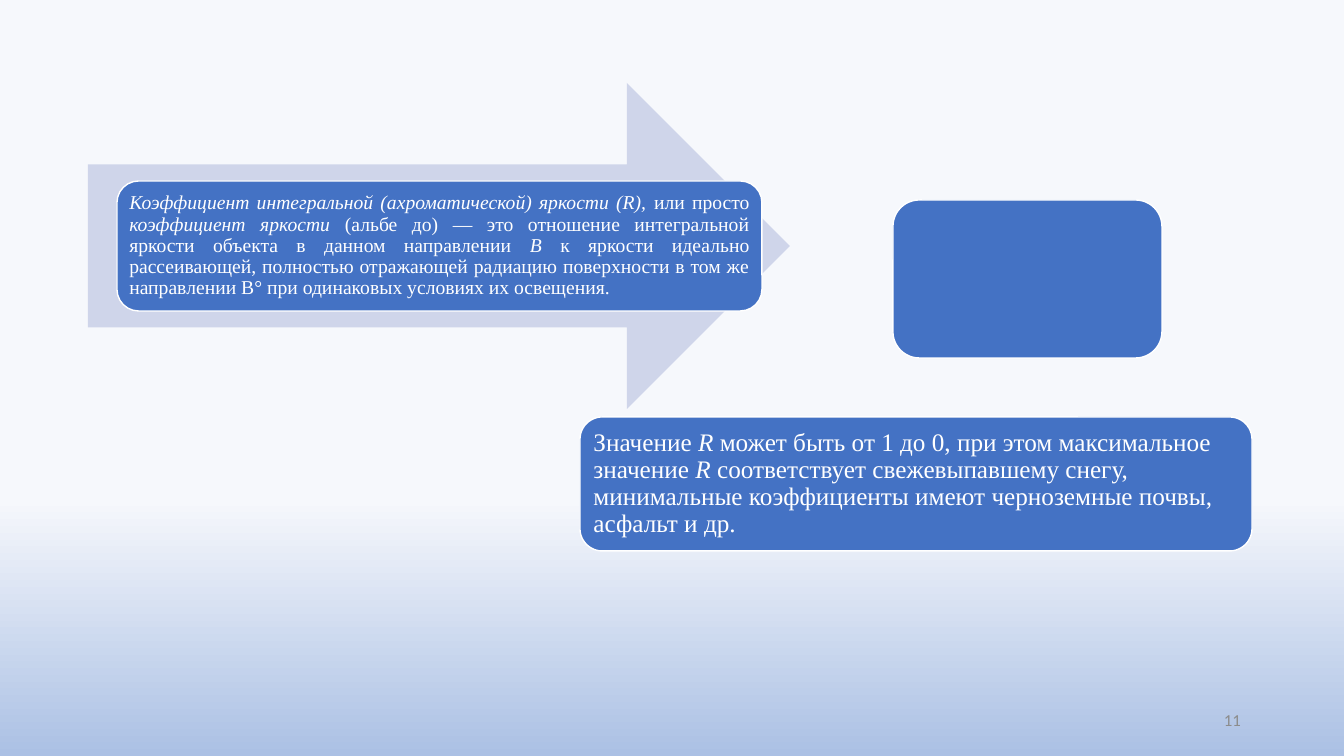
import pptx
import pptx.util
import pptx.dml.color
import pptx.enum.shapes
import pptx.enum.text

PX = 9071
WHITE = pptx.dml.color.RGBColor(0xFF, 0xFF, 0xFF)
BLUE = pptx.dml.color.RGBColor(0x44, 0x72, 0xC4)
ARROW_BLUE = pptx.dml.color.RGBColor(0xCF, 0xD5, 0xEA)
SKY_TOP = pptx.dml.color.RGBColor(0xF6, 0xF8, 0xFC)
SKY_BOTTOM = pptx.dml.color.RGBColor(0xAB, 0xC0, 0xE4)
NUMBER_GRAY = pptx.dml.color.RGBColor(0x8C, 0x8C, 0x8C)
SHAPES = pptx.enum.shapes.MSO_SHAPE
ALIGN = pptx.enum.text.PP_ALIGN

DEFINITION = [
    ("Коэффициент интегральной (ахроматической) яркости (R), ", True),
    ("или просто ", False),
    ("коэффициент яркости ", True),
    ("(альбе до) — это отношение интегральной яркости объекта в данном направлении ", False),
    ("В ", True),
    ("к яркости идеально рассеивающей, полностью отражающей радиацию поверхности "
     "в том же направлении В° при одинаковых условиях их освещения.", False),
]
VALUE_RANGE = [
    ("Значение ", False),
    ("R ", True),
    ("может быть от 1 до 0, при этом максимальное значение ", False),
    ("R ", True),
    ("соответствует свежевыпавшему снегу, минимальные коэффициенты имеют "
     "черноземные почвы, асфальт и др.", False),
]


def px(*lengths):
    return [pptx.util.Emu(length * PX) for length in lengths]


def paint_background(slide):
    fill = slide.background.fill
    fill.gradient()
    fill.gradient_angle = 270
    for stop, position, color in zip(fill.gradient_stops, (0.66, 1), (SKY_TOP, SKY_BOTTOM)):
        stop.position = position
        stop.color.rgb = color


def add_filled_shape(slide, kind, box, color):
    shape = slide.shapes.add_shape(kind, *px(*box))
    shape.shadow.inherit = False
    shape.fill.solid()
    shape.fill.fore_color.rgb = color
    shape.line.fill.background()
    return shape


def add_card(slide, box):
    card = add_filled_shape(slide, SHAPES.ROUNDED_RECTANGLE, box, BLUE)
    card.line.color.rgb = WHITE
    card.line.width = pptx.util.Pt(1)
    return card


def write_runs(shape, runs, size, inset, alignment, font="Times New Roman", color=WHITE):
    frame = shape.text_frame
    frame.word_wrap = True
    frame.vertical_anchor = pptx.enum.text.MSO_ANCHOR.MIDDLE
    frame.margin_left, frame.margin_top, frame.margin_right, frame.margin_bottom = px(*[inset] * 4)
    paragraph = frame.paragraphs[0]
    paragraph.alignment = alignment
    paragraph.line_spacing = 0.9
    for text, italic in runs:
        run = paragraph.add_run()
        run.text = text
        run.font.name = font
        run.font.size = pptx.util.Pt(size)
        run.font.italic = italic
        run.font.color.rgb = color


def add_definition(slide, box):
    left, top, width, height = box
    add_filled_shape(slide, SHAPES.RIGHT_ARROW, box, ARROW_BLUE)
    card = add_card(slide, (left + 29, top + 98, width - 57, height - 196))
    write_runs(card, DEFINITION, 14, 6, ALIGN.JUSTIFY)


def add_value_range(slide, box):
    write_runs(add_card(slide, box), VALUE_RANGE, 18, 7, ALIGN.LEFT)


def add_page_number(slide, box):
    number = slide.shapes.add_textbox(*px(*box))
    write_runs(number, [("11", False)], 12, 10, ALIGN.RIGHT, "Calibri", NUMBER_GRAY)


def main():
    presentation = pptx.Presentation()
    presentation.slide_width, presentation.slide_height = px(1344, 756)
    slide = presentation.slides.add_slide(presentation.slide_layouts[6])
    paint_background(slide)
    add_page_number(slide, (949, 701, 302, 40))
    add_card(slide, (893, 200, 269, 158))
    add_value_range(slide, (580, 417, 672, 134))
    add_definition(slide, (88, 83, 702, 326))
    presentation.save("out.pptx")


if __name__ == "__main__":
    main()
